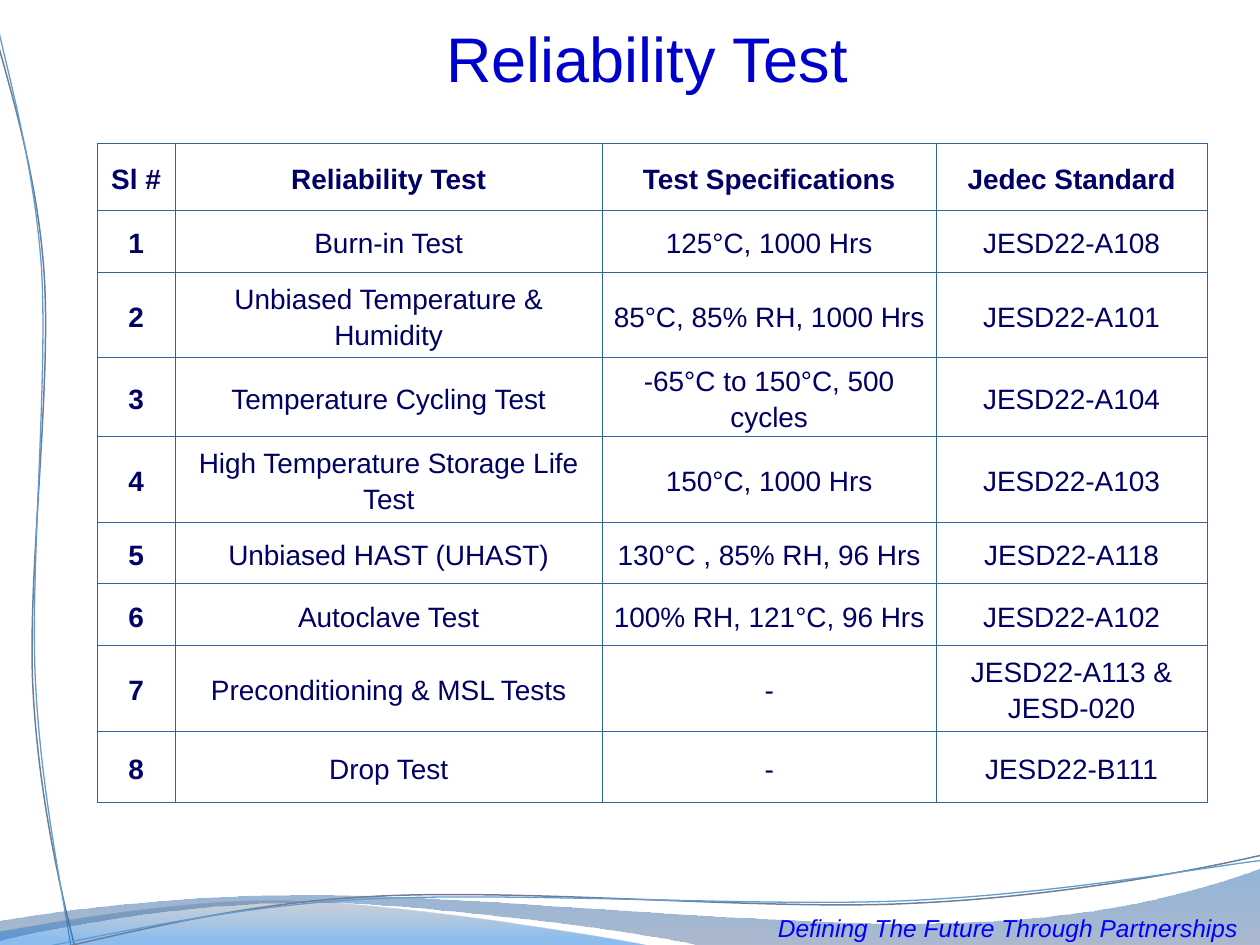
from lxml.etree import SubElement
from pptx import Presentation
from pptx.dml.color import RGBColor
from pptx.enum.text import MSO_ANCHOR, PP_ALIGN
from pptx.oxml.ns import qn
from pptx.util import Inches, Pt

FONT = "Arial"
COLORS = {
    "title": "0000CC", "motto": "0000FF", "text": "000066", "border": "2D679A",
    "gray_line": "707E95", "blue_line": "629DD1",
    "deep_blue": "125EAA", "slate": "697FA4", "steel": "596982", "bright": "0670DA",
}

TITLE = "Reliability Test"
MOTTO = "Defining The Future Through Partnerships"
TESTS = [
    ("Sl #", "Reliability Test", "Test Specifications", "Jedec Standard"),
    ("1", "Burn-in Test", "125°C, 1000 Hrs", "JESD22-A108"),
    ("2", "Unbiased Temperature & Humidity", "85°C, 85% RH, 1000 Hrs", "JESD22-A101"),
    ("3", "Temperature Cycling Test", "-65°C to 150°C, 500 cycles", "JESD22-A104"),
    ("4", "High Temperature Storage Life Test", "150°C, 1000 Hrs", "JESD22-A103"),
    ("5", "Unbiased HAST (UHAST)", "130°C , 85% RH, 96 Hrs", "JESD22-A118"),
    ("6", "Autoclave Test", "100% RH, 121°C, 96 Hrs", "JESD22-A102"),
    ("7", "Preconditioning & MSL Tests", "-", "JESD22-A113 & JESD-020"),
    ("8", "Drop Test", "-", "JESD22-B111"),
]
COLUMN_WIDTHS = [0.62, 3.39, 2.65, 2.15]
ROW_HEIGHTS = [0.53, 0.49, 0.68, 0.62, 0.68, 0.49, 0.49, 0.68, 0.57]

# Outlines in inches: a start point, then lines (2 numbers) or Bézier curves (6)
BANDS = [
    ([(9.99, 7.51), (5.59, 7.51), (5.24, 7.41, 3.36, 7.16, 2.41, 7.16),
      (1.46, 7.16, 0.41, 7.36, -0.01, 7.46), (-0.02, 7.31),
      (0.16, 7.27, 1.3, 7.09, 2.53, 7.1), (3.77, 7.1, 6.18, 7.35, 7.42, 7.32),
      (8.7, 7.31, 9.53, 7.06, 10, 6.89)],
     [(0, "deep_blue", 45), (1, "slate", 55)]),
    ([(5.2, 7.51), (4.9, 7.44, 3.17, 7.17, 2.31, 7.15),
      (1.44, 7.13, 0.38, 7.33, -0.01, 7.39), (-0.01, 7.5)],
     [(0, "steel", 30), (0.8, "bright", 45)]),
]
STRANDS = [
    ([(0.59, 7.5), (0.5, 7.14, 0.3, 6.32, 0.26, 5.43),
      (0.22, 4.54, 0.41, 3.07, 0.35, 2.17), (0.29, 1.27, 0, 0.47, -0.1, 0.03)],
     "gray_line", 0.85),
    ([(0.56, 7.5), (0.51, 7.15, 0.32, 6.27, 0.28, 5.38),
      (0.24, 4.49, 0.38, 3.03, 0.33, 2.14), (0.27, 1.24, 0.02, 0.45, -0.06, 0.01)],
     "blue_line", 0.75),
    ([(10, 6.79), (9.52, 6.9, 8.41, 7.12, 7.22, 7.17),
      (6.04, 7.23, 4.08, 7.04, 2.87, 7.12), (1.67, 7.19, 0.6, 7.52, 0.01, 7.62)],
     "gray_line", 0.85),
    ([(10, 6.83), (9.52, 6.89, 8.35, 7.1, 7.16, 7.15),
      (5.96, 7.2, 4.03, 7.07, 2.83, 7.14), (1.64, 7.21, 0.58, 7.49, -0.01, 7.58)],
     "blue_line", 0.75),
]


def rgb(key):
    return RGBColor.from_string(COLORS[key])


def add_outline(slide, outline, close):
    """Draw straight segments between the anchors, then bend the curved ones."""
    start, *anchors = [(Inches(s[-2]), Inches(s[-1])) for s in outline]
    builder = slide.shapes.build_freeform(*start, scale=1.0)
    builder.add_line_segments(anchors, close=close)
    wave = builder.convert_to_shape()
    wave.shadow.inherit = False
    lines = list(wave._element.spPr.iter(qn("a:lnTo")))
    for line, segment in zip(lines, outline[1:]):
        if len(segment) == 2:
            continue
        curve = line.makeelement(qn("a:cubicBezTo"), {})
        for x, y in zip(segment[::2], segment[1::2]):
            SubElement(curve, qn("a:pt"), x=str(Inches(x) - wave.left),
                       y=str(Inches(y) - wave.top))
        line.getparent().replace(line, curve)
    return wave


def add_band(slide, outline, stops):
    band = add_outline(slide, outline, close=True)
    band.line.fill.background()
    band.fill.gradient()
    band.fill.gradient_angle = 270
    for gradient_stop, (position, color, _) in zip(band.fill.gradient_stops, stops):
        gradient_stop.position = position
        gradient_stop.color.rgb = rgb(color)
    tints = band._element.spPr.iter(qn("a:srgbClr"))
    for tint, (_, _, opacity) in zip(list(tints), stops):
        SubElement(tint, qn("a:alpha"), val=str(opacity * 1000))


def add_strand(slide, outline, color, width):
    strand = add_outline(slide, outline, close=False)
    strand.fill.background()
    strand.line.color.rgb = rgb(color)
    strand.line.width = Pt(width)


def write(frame, text, size, color, bold=False, italic=False, spacing=None):
    paragraph = frame.paragraphs[0]
    paragraph.alignment = PP_ALIGN.CENTER
    paragraph.line_spacing = spacing
    run = paragraph.add_run()
    run.text = text
    font = run.font
    font.name, font.size, font.bold, font.italic = FONT, Pt(size), bold, italic
    font.color.rgb = rgb(color)


def add_borders(cell):
    properties = cell._tc.get_or_add_tcPr()
    for index, side in enumerate(("a:lnL", "a:lnR", "a:lnT", "a:lnB")):
        border = properties.makeelement(qn(side), {"w": str(Pt(0.5))})
        fill = SubElement(border, qn("a:solidFill"))
        SubElement(fill, qn("a:srgbClr"), val=COLORS["border"])
        properties.insert(index, border)


def add_test_table(slide):
    table = slide.shapes.add_table(
        len(TESTS), len(COLUMN_WIDTHS), Inches(0.77), Inches(1.14),
        Inches(sum(COLUMN_WIDTHS)), Inches(sum(ROW_HEIGHTS))).table
    table.first_row = table.horz_banding = False
    for column, width in zip(table.columns, COLUMN_WIDTHS):
        column.width = Inches(width)
    for row, height in zip(table.rows, ROW_HEIGHTS):
        row.height = Inches(height)
    for r, test in enumerate(TESTS):
        for c, text in enumerate(test):
            cell = table.cell(r, c)
            cell.fill.background()
            cell.vertical_anchor = MSO_ANCHOR.MIDDLE
            cell.margin_left = cell.margin_right = Inches(0.07)
            cell.margin_top, cell.margin_bottom = Inches(0.01), 0
            write(cell.text_frame, text, 16, "text", bold=r == 0 or c == 0, spacing=1.15)
            add_borders(cell)


def main():
    deck = Presentation()
    deck.slide_width, deck.slide_height = Inches(10), Inches(7.5)
    slide = deck.slides.add_slide(deck.slide_layouts[5])

    # Waves along the left and bottom edges
    for outline, color, width in STRANDS[:2]:
        add_strand(slide, outline, color, width)
    for outline, stops in BANDS:
        add_band(slide, outline, stops)
    for outline, color, width in STRANDS[2:]:
        add_strand(slide, outline, color, width)

    # Motto at the bottom right
    motto = slide.shapes.add_textbox(Inches(6), Inches(7.2), Inches(4), Inches(0.18))
    motto.text_frame.word_wrap = True
    write(motto.text_frame, MOTTO, 14, "motto", italic=True)

    # Title
    title = slide.shapes.title
    title.left, title.top = Inches(2.01), Inches(0.1)
    title.width, title.height = Inches(6.25), Inches(0.71)
    write(title.text_frame, TITLE, 36, "title")

    add_test_table(slide)
    deck.save("out.pptx")


if __name__ == "__main__":
    main()
